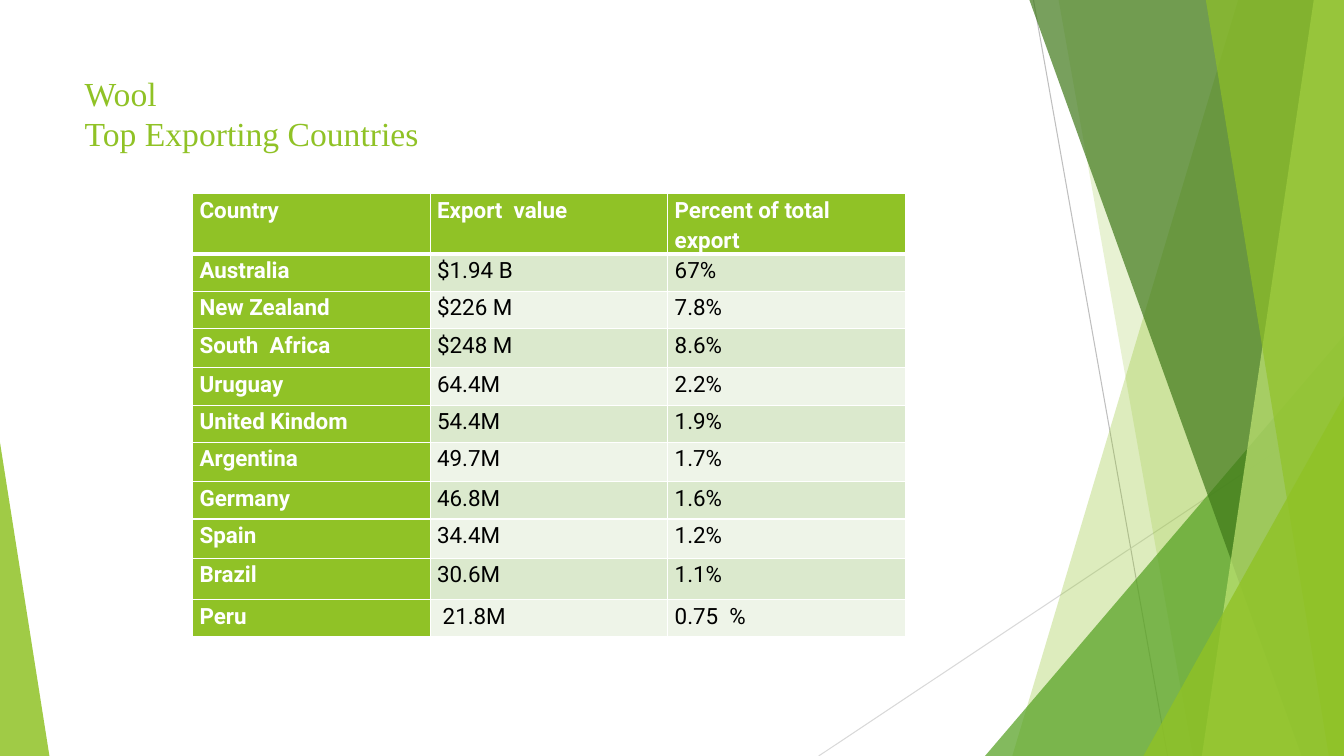
from dataclasses import dataclass
from pptx import Presentation as Deck
from pptx.dml.color import RGBColor as Rgb
from pptx.enum.shapes import MSO_CONNECTOR as Link, MSO_SHAPE as Form
from pptx.enum.text import MSO_ANCHOR as Anchor, PP_ALIGN as Align
from pptx.oxml.ns import qn
from pptx.oxml.xmlchemy import OxmlElement as Node
from pptx.util import Inches, Pt


@dataclass(frozen=True)
class Theme:
    lime: str = "90C226"
    leaf: str = "54A021"
    moss: str = "3F7819"
    pale: str = "C0E474"
    tint: str = "DBE9CD"
    mist: str = "EEF4E8"
    white: str = "FFFFFF"
    black: str = "000000"
    gray: str = "BFBFBF"
    silver: str = "D9D9D9"
    serif: str = "Times New Roman"
    sans: str = "Roboto"
    head: int = 24
    body: int = 16


WIDE, HIGH = 13.33, 7.5
ROWS = [
    ("Country", "Export  value", "Percent of total export"),
    ("Australia", "$1.94 B", "67%"),
    ("New Zealand", "$226 M", "7.8%"),
    ("South  Africa", "$248 M", "8.6%"),
    ("Uruguay", "64.4M", "2.2%"),
    ("United Kindom", "54.4M", "1.9%"),
    ("Argentina", "49.7M", "1.7%"),
    ("Germany", "46.8M", "1.6%"),
    ("Spain", "34.4M", "1.2%"),
    ("Brazil", "30.6M", "1.1%"),
    ("Peru", " 21.8M", "0.75  %"),
]
TALL = [0.6, 0.37, 0.37, 0.39, 0.37, 0.37, 0.39, 0.37, 0.39, 0.41, 0.37]


class Page:
    def __init__(self, slide, theme):
        self.slide = slide
        self.theme = theme

    def paint(self, shape, color, alpha):
        shape.shadow.inherit = False
        shape.line.fill.background()
        shape.fill.solid()
        shape.fill.fore_color.rgb = Rgb.from_string(color)
        tone = Node("a:alpha")
        tone.set("val", str(alpha * 1000))
        shape.fill._xPr.find(qn("a:solidFill"))[0].append(tone)

    def line(self, start, end, color):
        points = [Inches(v) for v in (*start, *end)]
        link = self.slide.shapes.add_connector(Link.STRAIGHT, *points)
        link.line.color.rgb = Rgb.from_string(color)
        link.line.width = Pt(0.75)
        link._element.spPr.append(Node("a:effectLst"))

    def band(self, top, foot, color, alpha):
        pen = self.slide.shapes.build_freeform(Inches(top), 0)
        ends = [(WIDE, 0), (WIDE, HIGH), (foot, HIGH)]
        pen.add_line_segments([(Inches(x), Inches(y)) for x, y in ends])
        self.paint(pen.convert_to_shape(), color, alpha)

    def wedge(self, left, top, width, peak, color, alpha):
        box = [Inches(v) for v in (left, top, width, HIGH - top)]
        shape = self.slide.shapes.add_shape(Form.ISOSCELES_TRIANGLE, *box)
        shape.adjustments[0] = peak
        self.paint(shape, color, alpha)

    def style(self, para, face, size, color, bold=False):
        para.alignment = Align.LEFT
        for run in para.runs:
            run.font.name = face
            run.font.size = Pt(size)
            run.font.bold = bold
            run.font.color.rgb = Rgb.from_string(color)

    def title(self, text, left, top, width, height):
        shape = self.slide.shapes.title
        shape.left, shape.top = Inches(left), Inches(top)
        shape.width, shape.height = Inches(width), Inches(height)
        frame = shape.text_frame
        frame.text = text
        frame.word_wrap = True
        frame.vertical_anchor = Anchor.TOP
        para = frame.paragraphs[0]
        para.line_spacing = 1.0
        self.style(para, self.theme.serif, self.theme.head, self.theme.lime)

    def edge(self, cell, sides):
        props = cell._tc.get_or_add_tcPr()
        for spot, (side, width) in enumerate(sides.items()):
            rule = Node(f"a:ln{side}")
            rule.set("w", str(Pt(width)))
            fill = Node("a:solidFill")
            tone = Node("a:srgbClr")
            tone.set("val", self.theme.white)
            fill.append(tone)
            rule.append(fill)
            props.insert(spot, rule)

    def cell(self, cell, text, row, col):
        theme = self.theme
        key = row == 0 or col == 0
        cell.margin_left = cell.margin_right = Inches(0.07)
        cell.margin_top = cell.margin_bottom = 0
        cell.vertical_anchor = Anchor.TOP
        cell.text = text
        para = cell.text_frame.paragraphs[0]
        para.line_spacing = 1.15
        ink = theme.white if key else theme.black
        self.style(para, theme.sans, theme.body, ink, key)
        shade = theme.tint if row % 2 else theme.mist
        cell.fill.solid()
        cell.fill.fore_color.rgb = Rgb.from_string(theme.lime if key else shade)
        self.edge(cell, {"L": 1, "R": 1, "T": 3 if row == 1 else 1,
                         "B": 3 if row == 0 else 1})

    def table(self, rows, tall, left, top, width):
        count = len(rows[0])
        box = [Inches(v) for v in (left, top, width, sum(tall))]
        grid = self.slide.shapes.add_table(len(rows), count, *box).table
        for col in grid.columns:
            col.width = Inches(width / count)
        for r, texts in enumerate(rows):
            grid.rows[r].height = Inches(tall[r])
            for c, text in enumerate(texts):
                self.cell(grid.cell(r, c), text, r, c)


def main():
    deck = Deck()
    deck.slide_width, deck.slide_height = Inches(WIDE), Inches(HIGH)
    theme = Theme()
    page = Page(deck.slides.add_slide(deck.slide_layouts[5]), theme)
    page.line((10.25, 0), (11.58, HIGH), theme.gray)
    page.line((WIDE, 4.03), (8.12, HIGH), theme.silver)
    page.band(12.28, 10.04, theme.lime, 30)
    page.band(10.5, 11.83, theme.lime, 20)
    page.wedge(9.77, 3.33, 3.56, 1, theme.leaf, 72)
    page.band(10.21, 12.91, theme.moss, 70)
    page.band(13.03, 11.92, theme.pale, 70)
    page.band(11.96, 13.18, theme.lime, 65)
    page.wedge(11.34, 3.93, 1.99, 1, theme.lime, 80)
    page.wedge(0, 4.39, 0.49, 0, theme.lime, 85)
    page.title("Wool\vTop Exporting Countries", 0.74, 0.67, 9.4, 1.44)
    page.table(ROWS, TALL, 1.91, 1.92, 7.07)
    deck.save("out.pptx")


if __name__ == "__main__":
    main()
